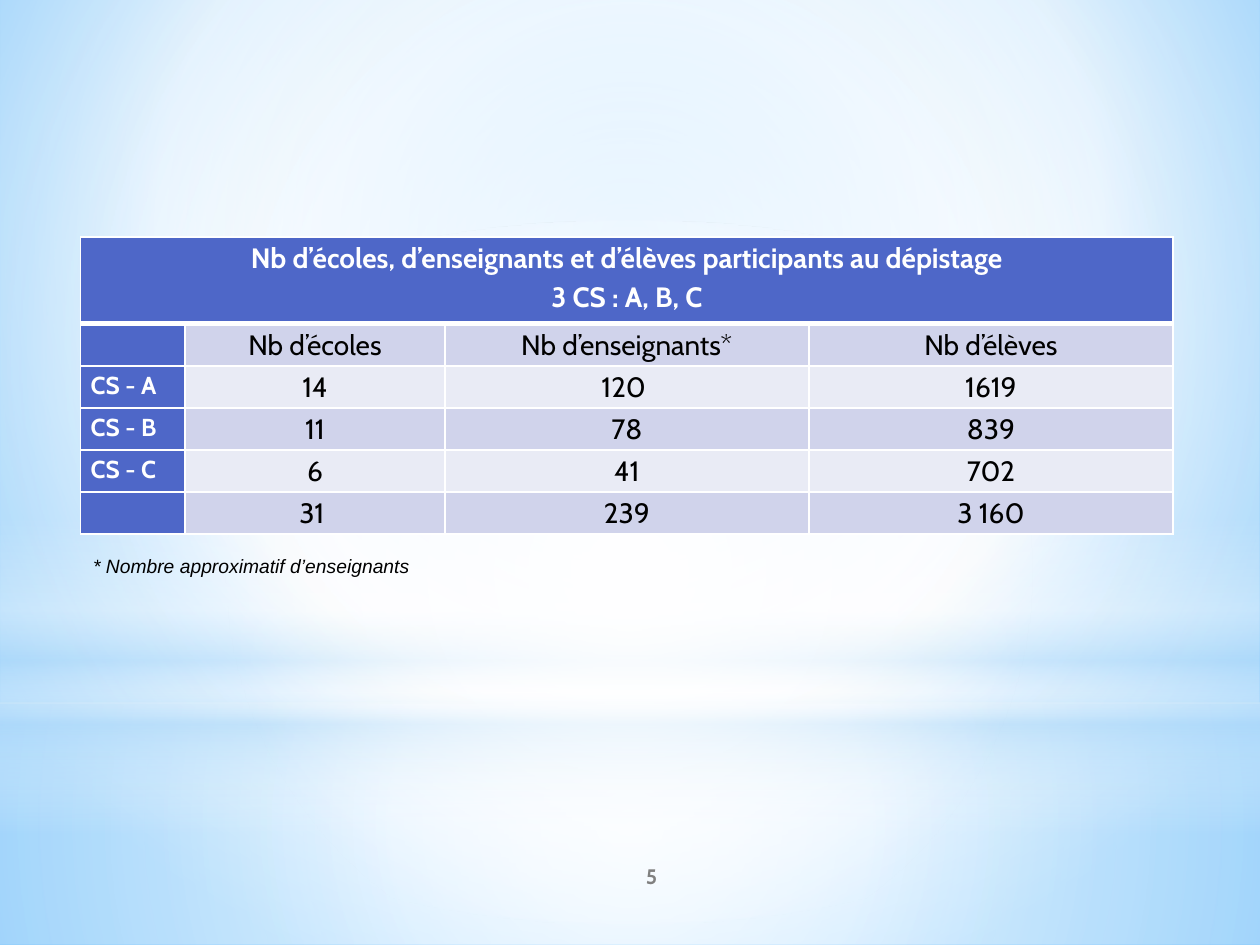
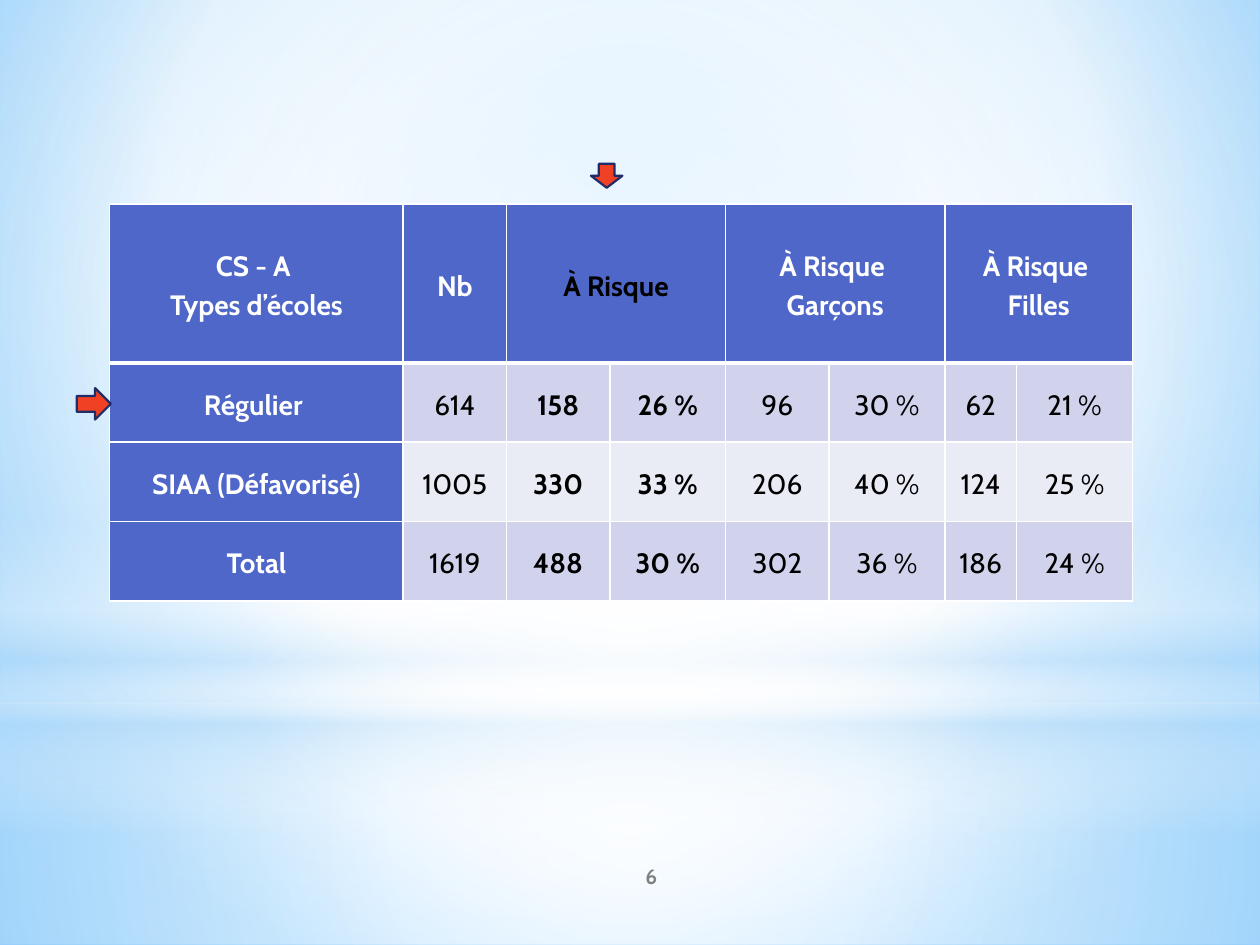
from lxml.etree import SubElement
from pptx import Presentation
from pptx.dml.color import RGBColor
from pptx.enum.shapes import MSO_SHAPE
from pptx.enum.text import MSO_ANCHOR, MSO_AUTO_SIZE, PP_ALIGN
from pptx.oxml.ns import qn
from pptx.util import Inches, Pt

WHITE = RGBColor(0xFF, 0xFF, 0xFF)
BLACK = RGBColor(0, 0, 0)
GREY = RGBColor(0x80, 0x80, 0x80)
BLUE = RGBColor(0x4E, 0x67, 0xC8)
NAVY = RGBColor(0x1F, 0x2E, 0x69)
RED = RGBColor(0xF1, 0x41, 0x24)
BAND_DARK = RGBColor(0xD0, 0xD3, 0xEB)
BAND_LIGHT = RGBColor(0xE9, 0xEB, 0xF5)
SKY = RGBColor(0x9E, 0xD5, 0xFF)
DEEP_SKY = RGBColor(0x5B, 0xB9, 0xFF)
PALE = RGBColor(0xB4, 0xDC, 0xFA)

CENTRE = (50, 50, 50, 50)


def write_text(tf, text, size=16, color=BLACK, bold=False, italic=False,
               font="Cabin", align=PP_ALIGN.CENTER, spacing=None):
    for i, line in enumerate(text.split("\n")):
        p = tf.paragraphs[0] if i == 0 else tf.add_paragraph()
        p.alignment = align
        p.line_spacing = spacing
        r = p.add_run()
        r.text = line
        r.font.name, r.font.size = font, Pt(size)
        r.font.bold, r.font.italic = bold, italic
        r.font.color.rgb = color


def add_color(parent, color, alpha=100):
    clr = SubElement(parent, qn("a:srgbClr"), val=str(color))
    if alpha < 100:
        SubElement(clr, qn("a:alpha"), val=str(alpha * 1000))


def set_gradient(fill, element, stops, focus=None):
    """Radial around focus (left, top, right, bottom in %), else top to bottom."""
    fill.solid()
    solid = element.find(".//" + qn("a:solidFill"))
    grad = solid.makeelement(qn("a:gradFill"), {"rotWithShape": "1"})
    gs_lst = SubElement(grad, qn("a:gsLst"))
    for pos, *color in stops:
        add_color(SubElement(gs_lst, qn("a:gs"), pos=str(pos * 1000)), *color)
    if focus:
        radial = SubElement(grad, qn("a:path"), path="circle")
        sides = {side: str(v * 1000) for side, v in zip("ltrb", focus)}
        SubElement(radial, qn("a:fillToRect"), sides)
    else:
        SubElement(grad, qn("a:lin"), ang="5400000", scaled="0")
    solid.getparent().replace(solid, grad)


def set_borders(cell, **widths):
    tcPr = cell._tc.get_or_add_tcPr()
    for side in "LRTB":
        ln = SubElement(tcPr, qn("a:ln" + side), w=str(Pt(widths.get(side, 1))))
        add_color(SubElement(ln, qn("a:solidFill")), WHITE)


class Deck:
    def __init__(self):
        self.prs = Presentation()
        self.prs.slide_width, self.prs.slide_height = Inches(10), Inches(7.5)
        self.s = None

    def new_slide(self, number):
        self.s = self.prs.slides.add_slide(self.prs.slide_layouts[6])
        self.text(4.17, 6.75, 2, 0.4, str(number), anchor=MSO_ANCHOR.MIDDLE,
                  size=12, color=GREY, bold=True)

    def shape(self, kind, x, y, w, h):
        sp = self.s.shapes.add_shape(kind, Inches(x), Inches(y), Inches(w), Inches(h))
        sp.shadow.inherit = False
        return sp

    def backdrop(self):
        """Put the sky background and its light veils on the master."""
        master = self.prs.slide_master
        set_gradient(master.background.fill, master.element,
                     [(0, SKY), (60, WHITE), (100, DEEP_SKY)], (20, 10, 20, 60))
        veils = [
            (MSO_SHAPE.RECTANGLE, 5.58, 1.92, CENTRE,
             [(0, WHITE, 91), (37, WHITE, 76), (100, PALE, 79)]),
            (MSO_SHAPE.RECTANGLE, 0, 5.58, CENTRE,
             [(0, WHITE, 89), (48, WHITE, 62), (100, PALE, 79)]),
            (MSO_SHAPE.RECTANGLE, 4.12, 2.5, None,
             [(0, WHITE, 0), (29, WHITE, 30), (45, PALE, 40),
              (55, WHITE, 26), (65, PALE, 60), (100, WHITE, 0)]),
            (MSO_SHAPE.OVAL, 1.75, 5.58, CENTRE, [(0, WHITE), (56, WHITE, 0)]),
        ]
        tree = master.element.cSld.spTree
        for i, (kind, y, h, focus, stops) in enumerate(veils):
            sp = self.shape(kind, 0, y, 10, h)
            sp.line.fill.background()
            set_gradient(sp.fill, sp.element, stops, focus)
            sp.element.nvSpPr.cNvPr.set("id", str(101 + i))
            tree.insert(2 + i, sp.element)

    def text(self, x, y, w, h, text, anchor=MSO_ANCHOR.TOP, wrap=True, **fmt):
        box = self.s.shapes.add_textbox(Inches(x), Inches(y), Inches(w), Inches(h))
        tf = box.text_frame
        tf.word_wrap, tf.vertical_anchor = wrap, anchor
        if not wrap:
            tf.auto_size = MSO_AUTO_SIZE.SHAPE_TO_FIT_TEXT
        write_text(tf, text, **fmt)

    def arrow(self, x, y, w, h, rotation=0):
        sp = self.shape(MSO_SHAPE.DOWN_ARROW, x, y, w, h)
        sp.rotation = rotation
        sp.fill.solid()
        sp.fill.fore_color.rgb = RED
        sp.line.color.rgb, sp.line.width = NAVY, Pt(1.25)

    def table(self, x, y, widths, heights, rows, spans, inset, anchor, cell_format):
        frame = self.s.shapes.add_table(len(rows), len(widths), Inches(x), Inches(y),
                                        Inches(sum(widths)), Inches(sum(heights)))
        tbl = frame.table
        tbl.horz_banding = False
        for col, w in zip(tbl.columns, widths):
            col.width = Inches(w)
        for row, h in zip(tbl.rows, heights):
            row.height = Inches(h)
        for first, last in spans:
            tbl.cell(0, first).merge(tbl.cell(0, last))
        for i, row in enumerate(rows):
            for j, text in enumerate(row):
                cell = tbl.cell(i, j)
                cell.margin_left = cell.margin_right = Inches(inset)
                cell.margin_top = cell.margin_bottom = 0
                cell.vertical_anchor = anchor
                # Thick rule between the heading and the body
                set_borders(cell, T=3 if i == 1 else 1, B=3 if i == 0 else 1)
                heading = i == 0 or j == 0
                cell.fill.solid()
                cell.fill.fore_color.rgb = (
                    BLUE if heading else BAND_DARK if i % 2 else BAND_LIGHT)
                if text:
                    fmt = {"color": WHITE if heading else BLACK, "bold": heading,
                           "spacing": 1.15, **cell_format(i, j)}
                    write_text(cell.text_frame, text, **fmt)


def participation_format(i, j):
    return {"size": 14, "align": PP_ALIGN.LEFT} if i and j == 0 else {}


def risk_format(i, j):
    return {"color": BLACK, "bold": True} if j in (2, 3) else {}


def main():
    deck = Deck()

    # Participation by school board
    deck.new_slide(5)
    deck.backdrop()
    deck.table(
        0.64, 1.88, [0.83, 2.06, 2.89, 2.89], [0.69] + [1.67 / 5] * 5,
        [["Nb d’écoles, d’enseignants et d’élèves participants au dépistage\n"
          "3 CS : A, B, C", "", "", ""],
         ["", "Nb d’écoles", "Nb d’enseignants*", "Nb d’élèves"],
         ["CS - A", "14", "120 ", "1619"],
         ["CS - B", "11", "78", "839"],
         ["CS - C", "6", "41", "702"],
         ["", "31 ", "239", "3 160"]],
        spans=[(0, 3)], inset=0.08, anchor=MSO_ANCHOR.TOP,
        cell_format=participation_format)
    deck.text(0.64, 4.35, 2.73, 0.29, "* Nombre approximatif d’enseignants",
              wrap=False, size=11, italic=True, font="Arial", align=PP_ALIGN.LEFT)

    # Pupils at risk by type of school
    deck.new_slide(6)
    deck.table(
        0.87, 1.62, [2.33, 0.82, 0.82, 0.92, 0.82, 0.92, 0.57, 0.92],
        [1.26] + [0.63] * 3,
        [["CS - A \nTypes d’écoles", "Nb", "À Risque", "",
          "À Risque \nGarçons", "", "À Risque \nFilles", ""],
         ["Régulier ", "614", "158", "26 %", "96", "30 %", "62", "21 %"],
         ["SIAA (Défavorisé)", "1005", "330", "33 %", "206", "40 %", "124", "25 %"],
         ["Total", "1619", "488", "30 %", "302", "36 %", "186", "24 %"]],
        spans=[(2, 3), (4, 5), (6, 7)], inset=0.05, anchor=MSO_ANCHOR.MIDDLE,
        cell_format=risk_format)
    deck.arrow(4.69, 1.3, 0.25, 0.19)
    deck.arrow(0.62, 3.07, 0.25, 0.27, rotation=270)

    deck.prs.save("out.pptx")


if __name__ == "__main__":
    main()
